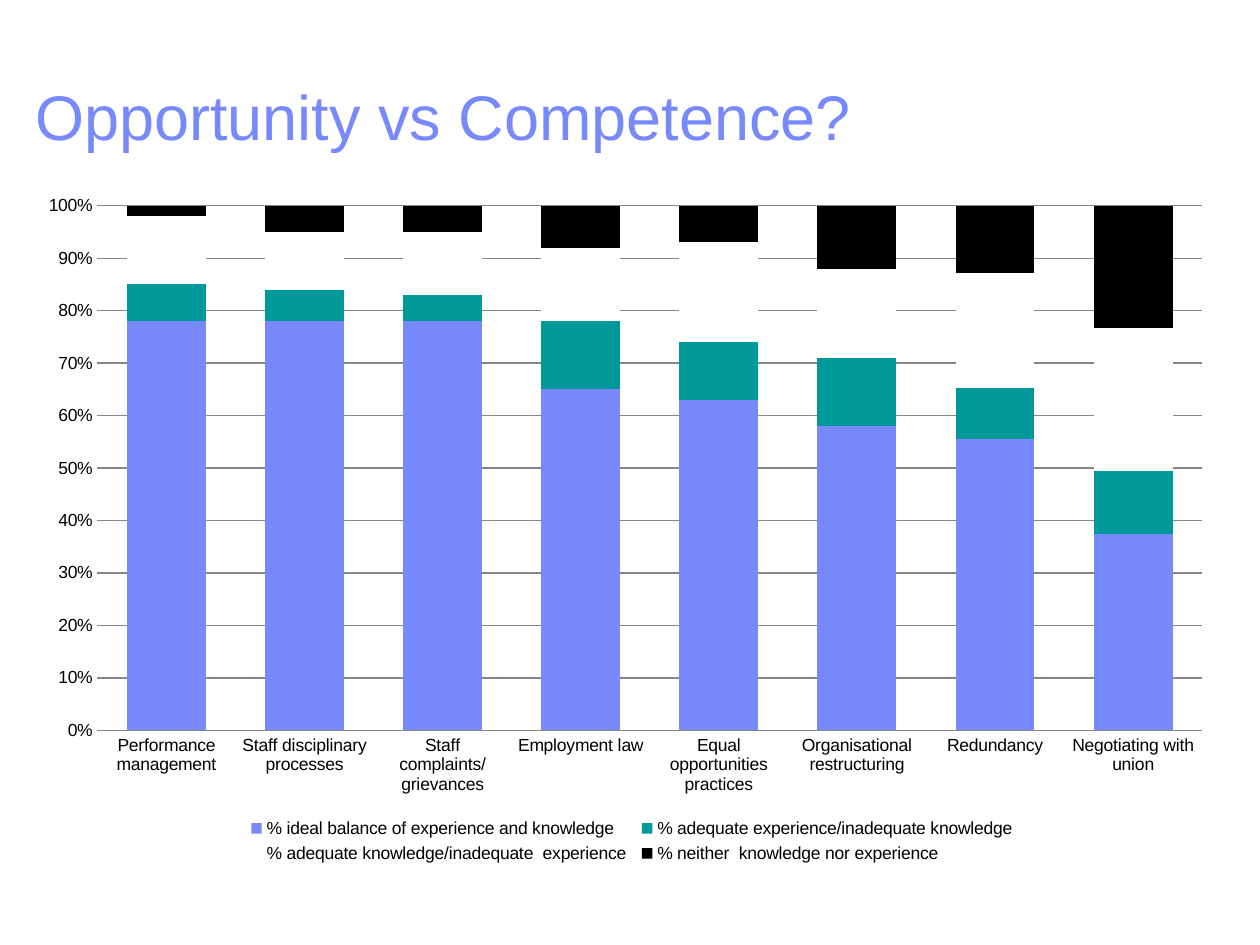
from lxml.etree import SubElement
from pptx import Presentation
from pptx.chart.data import CategoryChartData
from pptx.dml.color import RGBColor
from pptx.enum.chart import XL_CHART_TYPE as ChartType
from pptx.enum.chart import XL_LEGEND_POSITION as LegendPos
from pptx.enum.chart import XL_TICK_MARK as Tick
from pptx.enum.text import MSO_ANCHOR as Anchor
from pptx.oxml.ns import qn
from pptx.util import Cm, Pt

TITLE = "Opportunity vs Competence?"
FONT = "Arial"
BLUE, TEAL, WHITE, BLACK, GREY = "7889FB", "009999", "FFFFFF", "000000", "868686"

CATEGORIES = [
    "Performance management",
    "Staff disciplinary processes",
    "Staff complaints/grievances",
    "Employment law",
    "Equal opportunities practices",
    "Organisational restructuring",
    "Redundancy",
    "Negotiating with union",
]
SERIES = [
    ("% ideal balance of experience and knowledge", BLUE,
     (78, 78, 78, 65, 63, 58, 56, 37)),
    ("% adequate experience/inadequate knowledge", TEAL,
     (7, 6, 5, 13, 11, 13, 10, 12)),
    ("% adequate knowledge/inadequate  experience", WHITE,
     (13, 11, 12, 14, 19, 17, 22, 27)),
    ("% neither  knowledge nor experience", BLACK,
     (2, 5, 5, 8, 7, 12, 13, 23)),
]
# Fractions of the chart area: left, top, width, height
PLOT_BOX = (0.06, 0.03, 0.92, 0.76)
LEGEND_BOX = (0.18, 0.91, 0.65, 0.08)


def rgb(color):
    return RGBColor.from_string(color)


def set_font(font, size, color):
    font.name, font.size = FONT, Pt(size)
    font.color.rgb = rgb(color)


def place(element, box, inner=False):
    """Fix a chart part at a box given in fractions of the chart area."""
    layout = element.find(qn("c:layout"))
    if layout is None:
        layout = SubElement(element, qn("c:layout"))
        # The schema wants layout first in plotArea, after legendPos in legend
        element.insert(0 if inner else 1, layout)
    manual = SubElement(layout, qn("c:manualLayout"))
    settings = [("layoutTarget", "inner")] if inner else []
    settings += [("xMode", "edge"), ("yMode", "edge")]
    settings += zip("xywh", box)
    for tag, value in settings:
        SubElement(manual, qn(f"c:{tag}")).set("val", str(value))


def add_title(slide):
    sp = slide.shapes.add_textbox(Cm(0.53), Cm(1.45), Cm(23.16), Cm(1.93))
    tf = sp.text_frame
    tf.word_wrap = True
    tf.vertical_anchor = Anchor.MIDDLE
    tf.margin_left = Cm(0.18)
    p = tf.paragraphs[0]
    p.line_spacing = 0.9
    r = p.add_run()
    r.text = TITLE
    set_font(r.font, 36, BLUE)


def add_stacked_chart(slide):
    data = CategoryChartData(number_format="0")
    data.categories = CATEGORIES
    for name, _, values in SERIES:
        data.add_series(name, values)
    chart = slide.shapes.add_chart(
        ChartType.COLUMN_STACKED_100,
        Cm(0.51), Cm(3.73), Cm(24.21), Cm(13.92), data).chart
    chart.has_title = False
    set_font(chart.font, 10, BLACK)

    plot = chart.plots[0]
    plot.gap_width, plot.overlap = 75, 100
    plot.vary_by_categories = False
    for series, (_, color, _) in zip(plot.series, SERIES):
        series.format.fill.solid()
        series.format.fill.fore_color.rgb = rgb(color)
        series.format.line.fill.background()

    cat_axis, val_axis = chart.category_axis, chart.value_axis
    for axis in (cat_axis, val_axis):
        axis.major_tick_mark = axis.minor_tick_mark = Tick.NONE
    cat_axis.format.line.color.rgb = rgb(GREY)
    val_axis.format.line.fill.background()
    val_axis.minimum_scale, val_axis.maximum_scale = 0, 1
    val_axis.major_unit = 0.1
    val_axis.has_major_gridlines = True
    val_axis.major_gridlines.format.line.color.rgb = rgb(GREY)
    val_axis.tick_labels.number_format = "0%"
    val_axis.tick_labels.number_format_is_linked = False

    chart.has_legend = True
    chart.legend.position = LegendPos.BOTTOM
    chart.legend.include_in_layout = False
    area = chart.element.find(qn("c:chart"))
    place(area.find(qn("c:plotArea")), PLOT_BOX, inner=True)
    place(area.find(qn("c:legend")), LEGEND_BOX)


def main():
    prs = Presentation()
    prs.slide_width, prs.slide_height = Cm(25.4), Cm(19.05)
    slide = prs.slides.add_slide(prs.slide_layouts[6])
    add_title(slide)
    add_stacked_chart(slide)
    prs.save("out.pptx")


if __name__ == "__main__":
    main()
